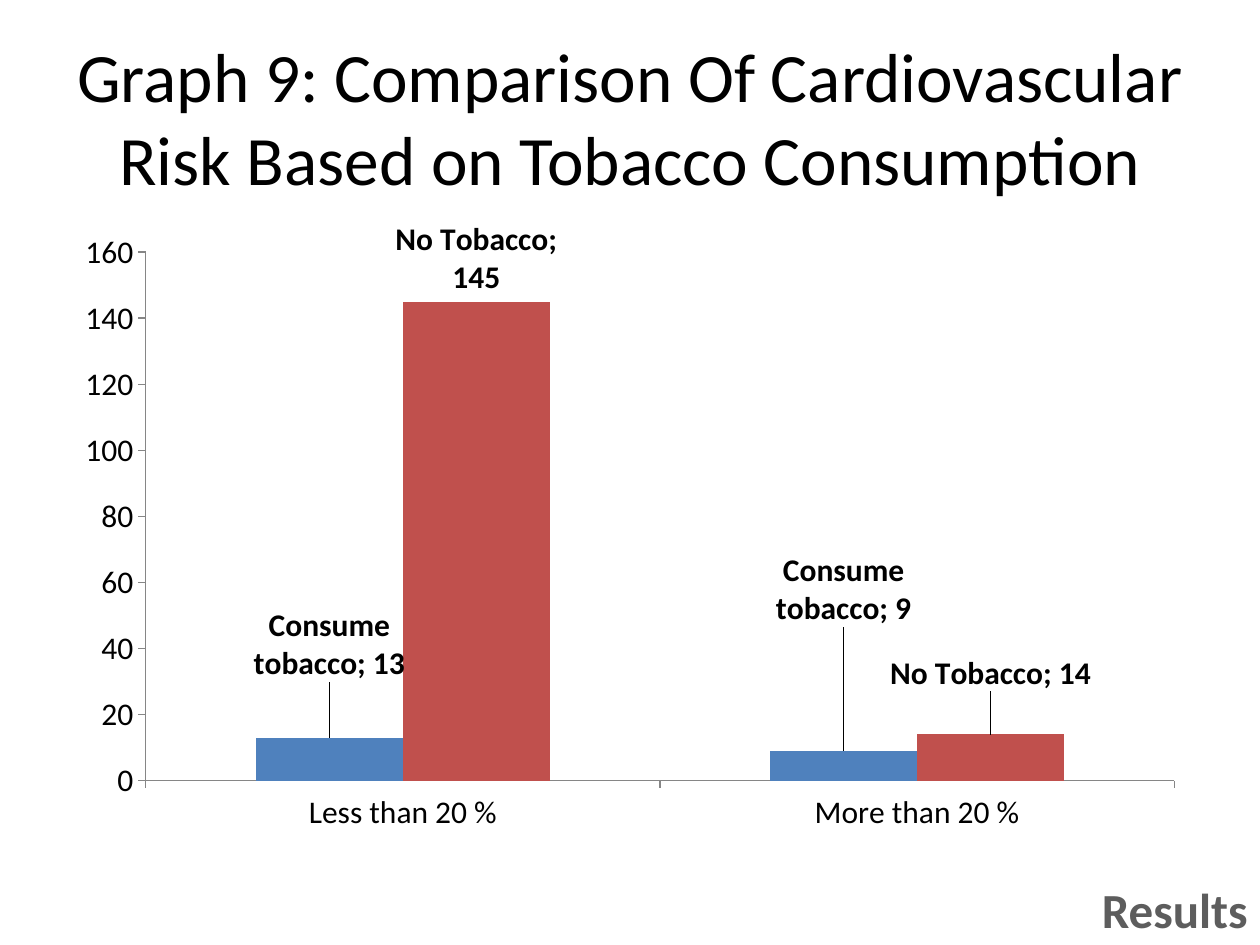
import pptx
import pptx.util
import pptx.dml.color
import pptx.chart.data
import pptx.enum.chart
import pptx.enum.text
import pptx.oxml
import pptx.oxml.ns

Pt = pptx.util.Pt
FONT = "Calibri"
TITLE = "Graph 9: Comparison Of Cardiovascular Risk Based on Tobacco Consumption"
FOOTER = "Results"
CATEGORIES = ["Less than 20 %", "More than 20 %"]
SERIES = [
    ("Consume tobacco", (13, 9), "4F81BD", {0: -0.08, 1: -0.19}),
    ("No Tobacco", (145, 14), "C0504D", {1: -0.06}),
]
PLOT = {"x": 0.073, "y": 0.05, "w": 0.907, "h": 0.848}


def rgb(value):
    return pptx.dml.color.RGBColor.from_string(value)


def style(font, size, color, bold=False):
    font.name = FONT
    font.size = Pt(size)
    font.bold = bold
    font.color.rgb = rgb(color)


def layout(values, inner=False):
    ns = pptx.oxml.ns.nsdecls("c")
    target = '<c:layoutTarget val="inner"/>' if inner else ""
    modes = '<c:xMode val="edge"/><c:yMode val="edge"/>' if inner else ""
    parts = "".join(f'<c:{k} val="{v}"/>' for k, v in values.items())
    return pptx.oxml.parse_xml(
        f"<c:layout {ns}><c:manualLayout>{target}{modes}{parts}</c:manualLayout></c:layout>")


def add_separator(label):
    ns = pptx.oxml.ns.nsdecls("c")
    sep = pptx.oxml.parse_xml(f"<c:separator {ns}>; </c:separator>")
    flags = label.xpath("c:showBubbleSize | c:showPercent | c:showSerName")
    flags[-1].addnext(sep)


def add_title(s):
    sp = s.shapes.title
    sp.left, sp.top, sp.width, sp.height = Pt(36), Pt(21.6), Pt(648), Pt(90)
    tf = sp.text_frame
    tf.text = TITLE
    tf.auto_size = pptx.enum.text.MSO_AUTO_SIZE.NONE
    style(tf.paragraphs[0].runs[0].font, 39.6, "000000")


def label_series(series, offsets):
    outside = pptx.enum.chart.XL_LABEL_POSITION.OUTSIDE_END
    labels = series.data_labels
    labels.show_value = True
    labels.show_series_name = True
    labels.position = outside
    style(labels.font, 18, "000000", True)
    for i, dy in offsets.items():
        label = series.points[i].data_label
        style(label.font, 18, "000000", True)
        label.position = outside
    for node in series._element.xpath("c:dLbls/c:dLbl"):
        idx = node.xpath("c:idx")[0]
        idx.addnext(layout({"x": 0, "y": offsets[int(idx.get("val"))]}))
        node.xpath("c:showSerName")[0].set("val", "1")
        add_separator(node)
    add_separator(series._element.xpath("c:dLbls")[0])


def add_bars(s):
    data = pptx.chart.data.CategoryChartData()
    data.categories = CATEGORIES
    for name, values, _, _ in SERIES:
        data.add_series(name, values)
    chart = s.shapes.add_chart(
        pptx.enum.chart.XL_CHART_TYPE.COLUMN_CLUSTERED,
        Pt(36), Pt(126), Pt(648), Pt(356.4), data).chart
    chart.has_legend = False
    chart.has_title = False
    style(chart.font, 18, "000000")
    for axis in (chart.category_axis, chart.value_axis):
        axis.has_major_gridlines = False
        axis.major_tick_mark = pptx.enum.chart.XL_TICK_MARK.OUTSIDE
        axis.minor_tick_mark = pptx.enum.chart.XL_TICK_MARK.NONE
        axis.format.line.color.rgb = rgb("868686")
        axis.format.line.width = Pt(0.75)
    chart.value_axis.minimum_scale = 0
    chart.value_axis.maximum_scale = 160
    chart.value_axis.major_unit = 20

    plot = chart.plots[0]
    plot.gap_width = 150
    plot.overlap = 0
    plot.vary_by_categories = False
    for series, (_, _, color, offsets) in zip(plot.series, SERIES):
        series.format.fill.solid()
        series.format.fill.fore_color.rgb = rgb(color)
        label_series(series, offsets)

    area = chart._chartSpace.xpath("c:chart/c:plotArea")[0]
    for old in area.xpath("c:layout"):
        area.remove(old)
    area.insert(0, layout(PLOT, inner=True))


def add_footer(s):
    tf = s.shapes.add_textbox(Pt(0), Pt(499), Pt(720), Pt(41)).text_frame
    tf.word_wrap = True
    tf.text = FOOTER
    p = tf.paragraphs[0]
    p.alignment = pptx.enum.text.PP_ALIGN.RIGHT
    style(p.runs[0].font, 28, "5D5D5D", True)


def main():
    prs = pptx.Presentation()
    prs.slide_width, prs.slide_height = Pt(720), Pt(540)
    s = prs.slides.add_slide(prs.slide_layouts[5])
    add_title(s)
    add_bars(s)
    add_footer(s)
    prs.save("out.pptx")


if __name__ == "__main__":
    main()
